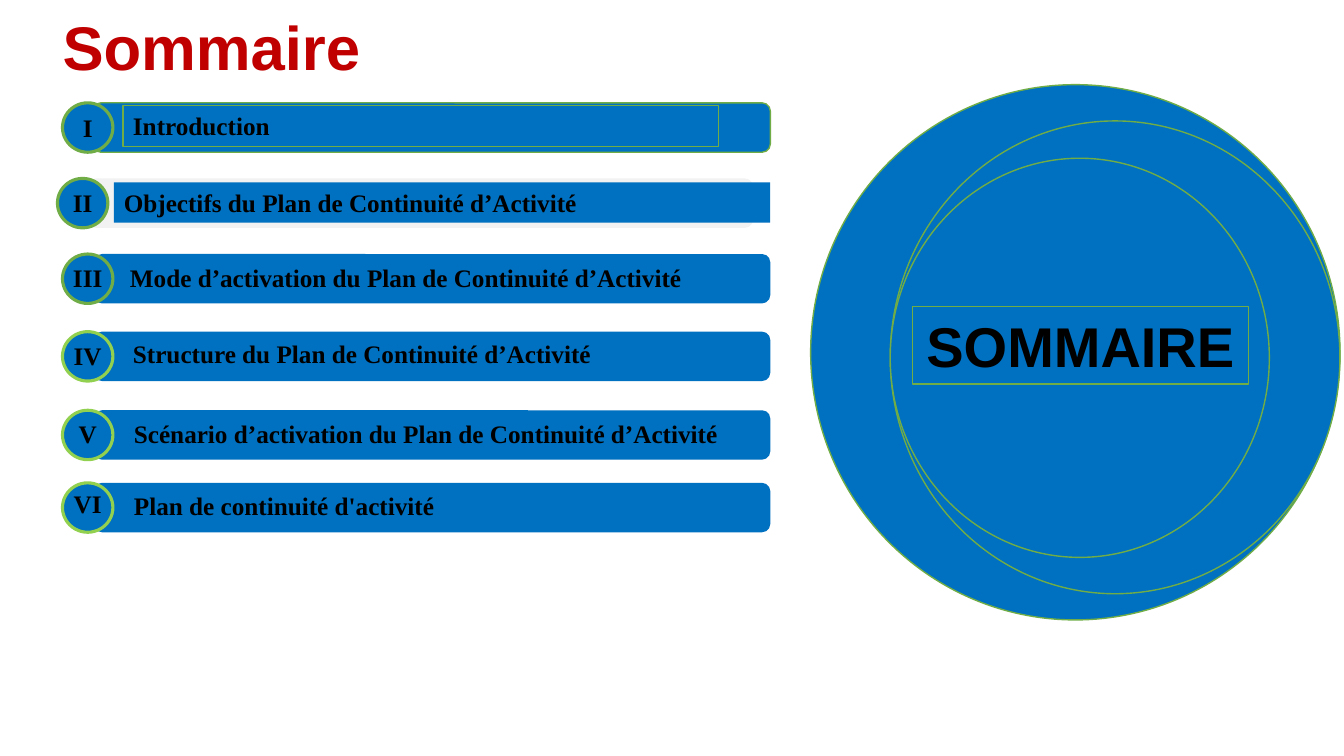
from dataclasses import dataclass
from typing import Optional

from pptx import Presentation
from pptx.dml.color import RGBColor
from pptx.enum.shapes import MSO_SHAPE as Preset
from pptx.enum.text import MSO_ANCHOR as Anchor, MSO_AUTO_SIZE as AutoSize, PP_ALIGN as Align
from pptx.util import Inches, Pt


@dataclass(frozen=True)
class Theme:
    red: str = "C00000"
    blue: str = "0070C0"
    green: str = "70AD47"
    lime: str = "92D050"
    grey: str = "F2F2F2"
    black: str = "000000"
    heading_font: str = "Arial"
    item_font: str = "Times New Roman"
    title_size: int = 44
    disc_size: int = 40
    item_size: int = 18


THEME = Theme()


@dataclass(frozen=True)
class Item:
    number: str
    label: str
    top: float
    badge_line: str = THEME.green
    left: float = 0.62
    bar: tuple = (0.31, 6.71)  # offset from the badge, width
    bar_fill: str = THEME.blue
    bar_line: Optional[str] = None
    label_box: tuple = (0.61, 0.03, 5.91)  # offsets from the badge, width
    label_fill: Optional[str] = None
    label_line: Optional[str] = None
    number_drop: Optional[float] = 0.03  # None: number sits inside the badge
    number_width: float = 1.05


ITEMS = [
    Item("I", "Introduction", 1.02, bar=(0.3, 6.72), bar_line=THEME.green,
         label_box=(0.6, 0.03, 5.91), label_fill=THEME.blue,
         label_line=THEME.green, number_drop=None),
    Item("II", "Objectifs du Plan de Continuité d’Activité", 1.77, left=0.57,
         bar=(0.3, 6.6), bar_fill=THEME.grey, label_box=(0.56, 0.04, 6.51),
         label_fill=THEME.blue, number_drop=0.04),
    Item("III", "Mode d’activation du Plan de Continuité d’Activité", 2.52,
         label_box=(0.57, 0.03, 5.91), label_fill=THEME.blue),
    Item("IV", "Structure du Plan de Continuité d’Activité", 3.29, THEME.lime,
         label_box=(0.6, 0.02, 5.91), number_drop=0.04, number_width=0.64),
    Item("V", "Scénario d’activation du Plan de Continuité d’Activité", 4.07,
         THEME.lime, label_box=(0.61, 0.03, 6.16)),
    Item("VI", "Plan de continuité d'activité", 4.79, THEME.lime,
         number_drop=0.01),
]


def write(shape, text, font, size, color=THEME.black, align=Align.LEFT, anchor=Anchor.TOP):
    frame = shape.text_frame
    frame.word_wrap = True
    frame.auto_size = AutoSize.NONE
    frame.vertical_anchor = anchor
    para = frame.paragraphs[0]
    para.alignment = align
    span = para.add_run()
    span.text = text
    span.font.name = font
    span.font.size = Pt(size)
    span.font.bold = True
    span.font.color.rgb = RGBColor.from_string(color)


def add_shape(shapes, preset, box, fill=None, line=None, weight=1):
    shape = shapes.add_shape(preset, *map(Inches, box))
    shape.shadow.inherit = False
    if fill:
        shape.fill.solid()
        shape.fill.fore_color.rgb = RGBColor.from_string(fill)
    else:
        shape.fill.background()
    if line:
        shape.line.color.rgb = RGBColor.from_string(line)
        shape.line.width = Pt(weight)
    else:
        shape.line.fill.background()
    return shape


def add_title(page, box):
    title = page.shapes.title
    title.left, title.top, title.width, title.height = map(Inches, box)
    write(title, "Sommaire", THEME.heading_font, THEME.title_size, THEME.red,
          anchor=Anchor.MIDDLE)


def add_item(page, item):
    shapes = page.shapes.add_group_shape().shapes
    badge_size, text_height = 0.5, 0.4
    left, top = item.left, item.top

    # Bar and numbered badge
    offset, width = item.bar
    add_shape(shapes, Preset.ROUNDED_RECTANGLE, (left + offset, top, width, 0.49),
              item.bar_fill, item.bar_line)
    badge = add_shape(shapes, Preset.OVAL, (left, top, badge_size, 0.49),
                      THEME.blue, item.badge_line, 2.25)

    # Label
    offset, drop, width = item.label_box
    box = (left + offset, top + drop, width, text_height)
    if item.label_fill:
        label = add_shape(shapes, Preset.RECTANGLE, box, item.label_fill,
                          item.label_line, 0.75)
    else:
        label = shapes.add_textbox(*map(Inches, box))
    write(label, item.label, THEME.item_font, THEME.item_size)

    # Number, centred on the badge
    number, anchor = badge, Anchor.MIDDLE
    if item.number_drop is not None:
        number_left = left + (badge_size - item.number_width) / 2
        number = shapes.add_textbox(*map(Inches, (
            number_left, top + item.number_drop, item.number_width, text_height)))
        anchor = Anchor.TOP
    write(number, item.number, THEME.item_font, THEME.item_size,
          align=Align.CENTER, anchor=anchor)


def add_disc(page, left, top):
    shapes = page.shapes.add_group_shape().shapes
    # Nested discs: offset x, offset y, width, height
    for x, y, width, height in [(0, 0, 5.25, 5.31), (0.79, 0.36, 4.46, 4.69),
                                (0.79, 0.73, 3.76, 3.96)]:
        add_shape(shapes, Preset.OVAL, (left + x, top + y, width, height),
                  THEME.blue, THEME.green)
    # Caption
    caption = add_shape(shapes, Preset.RECTANGLE, (left + 1.01, top + 2.2, 3.33, 0.77),
                        THEME.blue, THEME.green, 0.75)
    write(caption, "SOMMAIRE", THEME.heading_font, THEME.disc_size, align=Align.CENTER)


def main():
    deck = Presentation()
    deck.slide_width, deck.slide_height = Inches(13.33), Inches(7.5)
    page = deck.slides.add_slide(deck.slide_layouts[5])
    add_title(page, (0.52, 0.08, 10.5, 0.76))
    for item in ITEMS:
        add_item(page, item)
    add_disc(page, 8.04, 0.84)
    deck.save("out.pptx")


if __name__ == "__main__":
    main()
